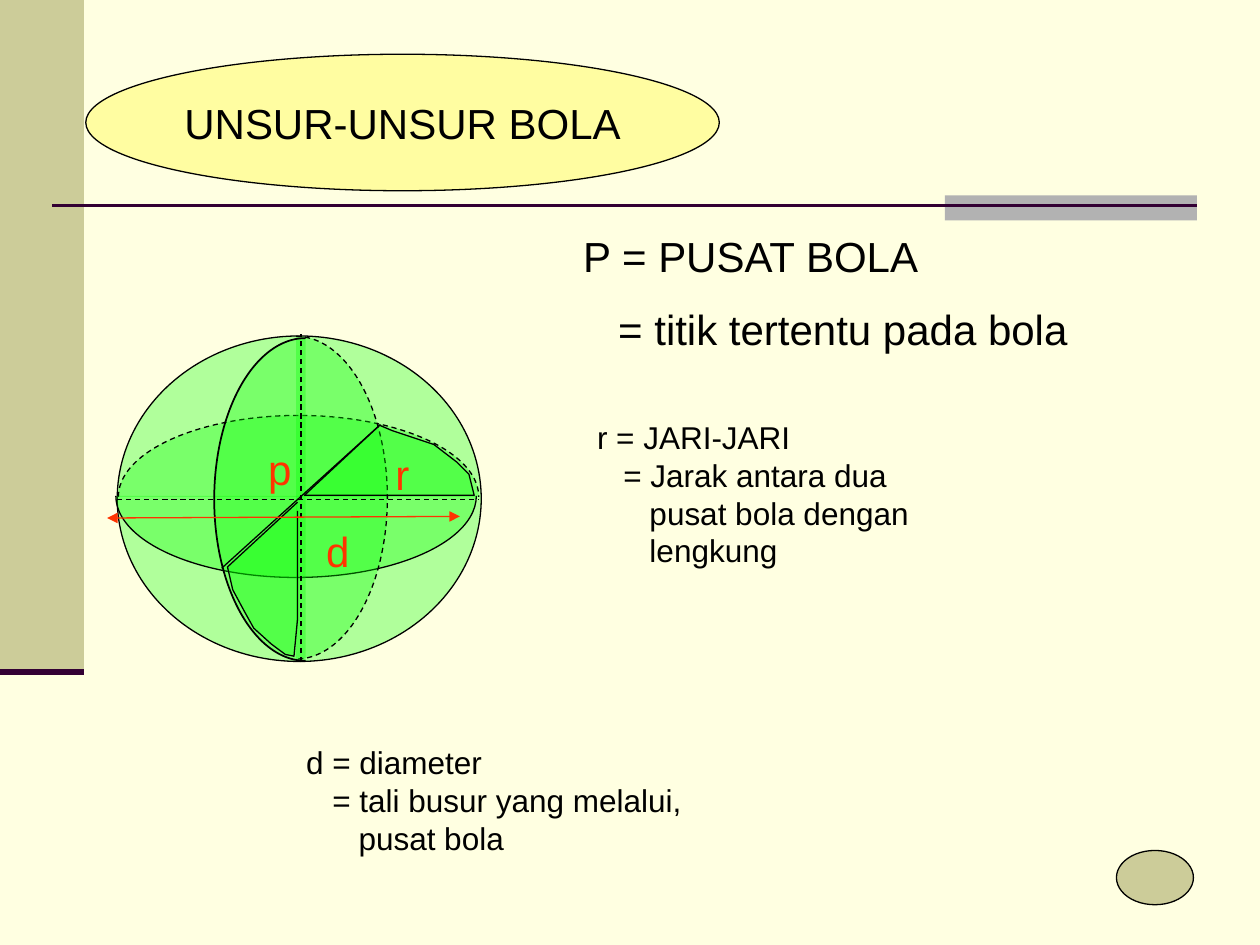
from pptx import Presentation
from pptx.dml.color import RGBColor
from pptx.enum.dml import MSO_LINE
from pptx.enum.shapes import MSO_CONNECTOR, MSO_SHAPE as Kind
from pptx.enum.text import MSO_ANCHOR, PP_ALIGN
from pptx.oxml.ns import qn
from pptx.util import Pt
from lxml.etree import SubElement

rgb = RGBColor.from_string
INK, RED, GREEN, PLUM = "000000", "FF3300", "00FF00", "330033"

deck = Presentation()
deck.slide_width, deck.slide_height = Pt(720), Pt(540)
slide = deck.slides.add_slide(deck.slide_layouts[5])
slide.background.fill.solid()
slide.background.fill.fore_color.rgb = rgb("FFFFE1")
shapes = slide.shapes


def paint(shape, fill, width=0, alpha=None, dash=False):
    """Fill a shape, with a black outline if width is given."""
    shape.shadow.inherit = False
    shape.fill.solid()
    shape.fill.fore_color.rgb = rgb(fill)
    if alpha:
        tint = shape._element.spPr.find(qn("a:solidFill"))[0]
        SubElement(tint, qn("a:alpha"), val=str(alpha * 1000))
    if not width:
        shape.line.fill.background()
        return
    shape.line.color.rgb = rgb(INK)
    shape.line.width = Pt(width)
    if dash:
        shape.line.dash_style = MSO_LINE.DASH


def draw(x1, y1, x2, y2, color=INK, width=0.75, dash=False):
    """Add a straight line and return it."""
    line = shapes.add_connector(MSO_CONNECTOR.STRAIGHT, Pt(x1), Pt(y1), Pt(x2), Pt(y2))
    line.line.color.rgb = rgb(color)
    line.line.width = Pt(width)
    if dash:
        line.line.dash_style = MSO_LINE.DASH
    SubElement(line._element.spPr, qn("a:effectLst"))
    return line


# Side band, header rule and title
for box, fill in [((0, 0, 48, 384), "CCCC99"), ((540, 111.6, 144, 14.4), "B2B2B2")]:
    paint(shapes.add_shape(Kind.RECTANGLE, *map(Pt, box)), fill)
draw(30, 117.5, 684, 117.5, PLUM, 1.5)
draw(0, 384, 48, 384, PLUM, 3.5)

spot = [Pt(v) for v in (49, 31, 362, 78)]
paint(shapes.add_shape(Kind.OVAL, *spot), "FFFDA1", 0.75)
title = shapes.title
title.left, title.top, title.width, title.height = spot
shapes._spTree.append(title._element)
frame = title.text_frame
frame.vertical_anchor = MSO_ANCHOR.MIDDLE
para = frame.paragraphs[0]
para.alignment = PP_ALIGN.CENTER
run = para.add_run()
run.text = "UNSUR-UNSUR BOLA"
run.font.name, run.font.size = "Arial", Pt(24)
run.font.color.rgb = rgb(INK)

# Ball with its half circles: centre, radii, angles, line width, dashed
paint(shapes.add_shape(Kind.OVAL, Pt(67), Pt(192), Pt(208), Pt(186)), GREEN, 0.75, 31)
halves = [
    (170.6, 284, 103, 46.6, 180, 0, 0.75, True),
    (169.2, 283.4, 103, 46.6, 0, 180, 0.75, False),
    (169.2, 284.4, 52.2, 92.2, 270, 90, 0.75, True),
    (174.6, 285.4, 52.2, 92.2, 90, 270, 1, False),
]
for cx, cy, rx, ry, start, end, width, dash in halves:
    arc = shapes.add_shape(Kind.ARC, Pt(cx - rx), Pt(cy - ry), Pt(2 * rx), Pt(2 * ry))
    # One degree is 60000 units, and an adjustment of 1 is 100000
    arc.adjustments[0], arc.adjustments[1] = start * 0.6, end * 0.6
    paint(arc, GREEN, width, 31, dash)

draw(172, 378.5, 172, 190.8, dash=True)
draw(67, 285.5, 273.6, 285.5, dash=True)
draw(126.7, 324.7, 217.4, 242.6)

# Sectors
right = [(174.2, 283), (270.7, 283), (267.8, 270.7), (260.6, 263.5), (248.4, 254.2),
         (223.9, 245.5), (217.4, 243.4)]
lower = [(170.4, 287.3), (129.6, 324), (133.2, 337), (139.7, 349.9), (144.7, 358.6),
         (154.8, 367.9), (163.4, 374.4), (168.5, 375.1), (169.9, 354.2), (169.9, 291.6)]
for points, close in [(right, True), (lower, False)]:
    pen = shapes.build_freeform(*points[0], scale=Pt(1))
    pen.add_line_segments(points[1:], close=close)
    paint(pen.convert_to_shape(), GREEN, 0.75, 31)

arrow = draw(61.2, 296, 262.8, 295.1, RED)
for end in ("a:headEnd", "a:tailEnd"):
    SubElement(arrow.line._get_or_add_ln(), qn(end), type="triangle")

# Labels and definitions: box, size, colour, gap, lines with their indents
texts = [
    ((218.9, 252.7, 71, 36), 24, RED, 0, [("r", 0)]),
    ((179.3, 296.6, 46, 36), 24, RED, 0, [("d", 0)]),
    ((146.2, 249.8, 31, 36), 24, RED, 0, [("p", 0)]),
    ((326.2, 128.2, 344, 79), 24, INK, 13, [
        ("P = PUSAT BOLA", 0), ("= titik tertentu pada bola", 20)]),
    ((167.8, 421.2, 360, 79), 18, INK, 0, [
        ("d = diameter", 0), ("= tali busur yang melalui,", 15), ("pusat bola", 30)]),
    ((334.1, 235.4, 360, 103), 18, INK, 0, [
        ("r = JARI-JARI", 0), ("= Jarak antara dua", 15),
        ("pusat bola dengan", 30), ("lengkung", 30)]),
]
for box, size, color, gap, lines in texts:
    frame = shapes.add_textbox(*map(Pt, box)).text_frame
    frame.word_wrap = True
    for i, (words, indent) in enumerate(lines):
        para = frame.add_paragraph() if i else frame.paragraphs[0]
        para.space_before = Pt(gap if i else 0)
        para._p.get_or_add_pPr().set("marL", str(Pt(indent)))
        run = para.add_run()
        run.text = words
        run.font.name, run.font.size = "Arial", Pt(size)
        run.font.color.rgb = rgb(color)

paint(shapes.add_shape(Kind.OVAL, Pt(638), Pt(486), Pt(44), Pt(31)), "CCCC99", 0.75)

deck.save("out.pptx")
